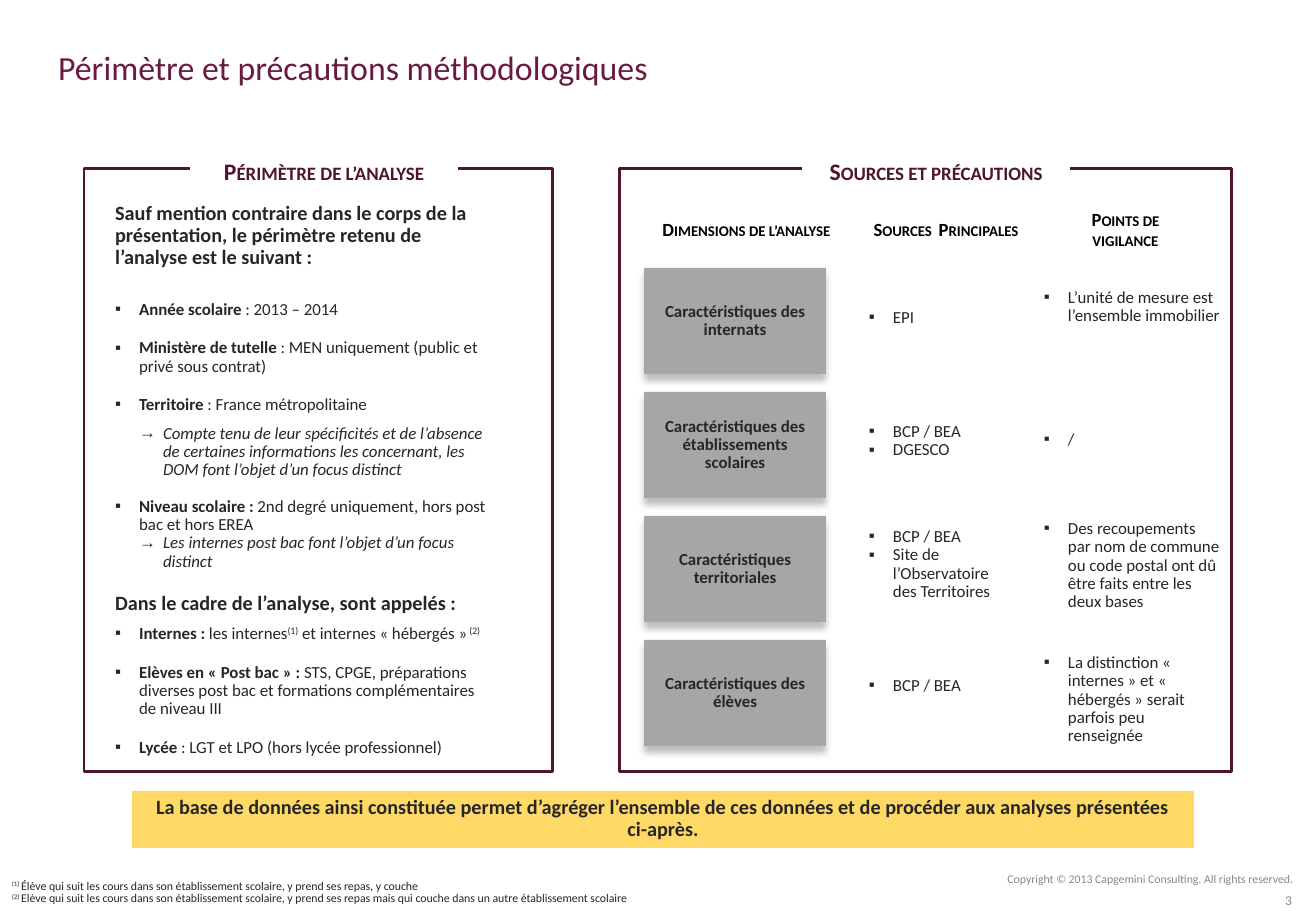
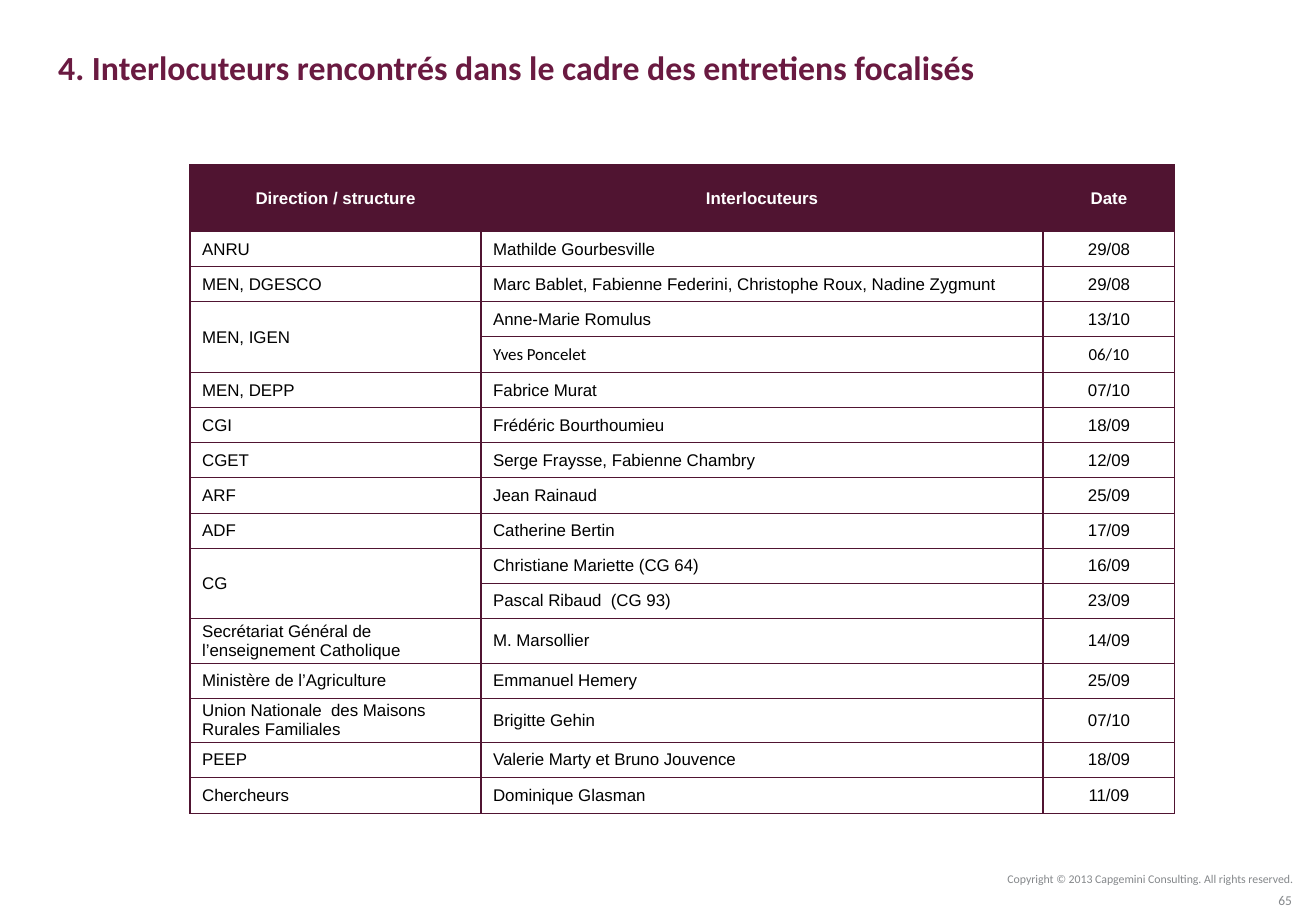
from lxml import etree
from pptx import Presentation
from pptx import util as u
from pptx.dml.color import RGBColor
from pptx.enum import shapes, text
from pptx.oxml import ns

PX = 914400 / 121.5
COLORS = {"title": "6A1A41", "plum": "501431", "ink": "262626", "black": "000000",
          "white": "FFFFFF", "footer": "85888B", "band": "FFD966", "card": "A6A6A6",
          "shadow": "BFBFBF"}
LEFT, CENTER, RIGHT = text.PP_ALIGN.LEFT, text.PP_ALIGN.CENTER, text.PP_ALIGN.RIGHT
TOP, MIDDLE = text.MSO_ANCHOR.TOP, text.MSO_ANCHOR.MIDDLE


def write(frame, content, size=10, color="ink", bold=False, italic=False, font="Calibri",
          align=LEFT, before=0, after=0, spacing=0.9, bullet=None, indent=0, caps=False):
    """Add one paragraph; *stars* mark bold text and ^carets^ mark superscript."""
    first = frame.paragraphs[0]
    p = frame.add_paragraph() if first.runs else first
    props = p._p.get_or_add_pPr()
    props.set("marL", str(round(indent * PX)))
    props.set("indent", str(round(-24 * PX) if bullet else 0))
    if bullet:
        etree.SubElement(props, ns.qn("a:buFont")).set("typeface", "Arial")
        etree.SubElement(props, ns.qn("a:buChar")).set("char", bullet)
    else:
        etree.SubElement(props, ns.qn("a:buNone"))
    p.alignment, p.line_spacing = align, spacing
    p.space_before, p.space_after = u.Pt(before), u.Pt(after)
    for b, chunk in enumerate(content.split("*")):
        for s, piece in enumerate(chunk.split("^")):
            if not piece:
                continue
            run = p.add_run()
            run.text = piece
            run.font.name, run.font.size = font, u.Pt(size)
            run.font.bold, run.font.italic = bold or b % 2 == 1, italic
            run.font.color.rgb = RGBColor.from_string(COLORS[color])
            if s % 2:
                run.font._element.set("baseline", "30000")
            if caps:
                run.font._element.set("cap", "small")


def box(slide, place, fill=None, line=None, anchor=MIDDLE):
    """Add a text box, or a rectangle when a fill is given."""
    place = [round(v * PX) for v in place]
    if fill:
        shape = slide.shapes.add_shape(shapes.MSO_SHAPE.RECTANGLE, *place)
        shape.shadow.inherit = False
        shape.fill.solid()
        shape.fill.fore_color.rgb = RGBColor.from_string(COLORS[fill])
        if line:
            shape.line.color.rgb = RGBColor.from_string(COLORS[line])
            shape.line.width = u.Pt(1.75)
        else:
            shape.line.fill.background()
    else:
        shape = slide.shapes.add_textbox(*place)
    shape.text_frame.word_wrap = True
    shape.text_frame.vertical_anchor = anchor
    return shape


deck = Presentation()
deck.slide_width, deck.slide_height = round(1316 * PX), round(911 * PX)
scope = deck.slides.add_slide(deck.slide_layouts[1])
contacts = deck.slides.add_slide(deck.slide_layouts[5])

# Titles and footers
for slide, heading, bold, number in (
        (scope, "Périmètre et précautions méthodologiques", False, "3"),
        (contacts, "4. Interlocuteurs rencontrés dans le cadre des entretiens focalisés",
         True, "65")):
    title = slide.shapes.title
    title.left, title.top, title.width, title.height = [
        round(v * PX) for v in (46, 16, 1270, 102)]
    title.text_frame.auto_size = text.MSO_AUTO_SIZE.NONE
    title.text_frame.vertical_anchor = MIDDLE
    write(title.text_frame, heading, size=20, color="title", bold=bold, spacing=1.0)
    write(box(slide, (920, 865, 385, 27)).text_frame,
          "Copyright © 2013 Capgemini Consulting. All rights reserved.",
          size=7, color="footer", align=RIGHT, spacing=1.0)
    write(box(slide, (997, 892, 307, 16)).text_frame, number,
          size=8, color="footer", align=RIGHT, spacing=1.0)

# Framed panels with their captions
for left, width, caption_left, caption in (
        (84, 469, 190, "Périmètre de l’analyse"),
        (620, 612, 802, "Sources et précautions")):
    box(scope, (left, 169, width, 603), fill="white", line="plum")
    write(box(scope, (caption_left, 149, 268, 47), fill="white").text_frame, caption,
          size=14, color="plum", bold=True, align=CENTER, caps=True)

# Scope of the analysis
perimeter = scope.placeholders[1]
perimeter.left, perimeter.top, perimeter.width, perimeter.height = [
    round(v * PX) for v in (103, 197, 401, 570)]
scope.shapes._spTree.append(perimeter._element)
perimeter.text_frame.auto_size = text.MSO_AUTO_SIZE.NONE
perimeter.text_frame.vertical_anchor = TOP
lead = dict(size=12, bold=True)
point = dict(bullet="▪", indent=24)
spaced = dict(point, before=6, after=6)
arrow = dict(bullet="→", indent=48, italic=True)
for content, style in (
        ("Sauf mention contraire dans le corps de la présentation, le périmètre retenu de "
         "l’analyse est le suivant :", lead),
        ("*Année scolaire *: 2013 – 2014", dict(spaced, before=19)),
        ("*Ministère de tutelle *: MEN uniquement (public et privé sous contrat)", spaced),
        ("*Territoire *: France métropolitaine", spaced),
        ("Compte tenu de leur spécificités et de l’absence de certaines informations les "
         "concernant, les DOM font l’objet d’un focus distinct", arrow),
        ("*Niveau scolaire : *2nd degré uniquement, hors post bac et hors EREA",
         dict(point, before=11)),
        ("Les internes post bac font l’objet d’un focus distinct", arrow),
        ("Dans le cadre de l’analyse, sont appelés :", dict(lead, before=13)),
        ("*Internes : *les internes^(1)^ et internes « hébergés »^ (2)^", spaced),
        ("*Elèves en « Post bac » : *STS, CPGE, préparations diverses post bac et "
         "formations complémentaires de niveau III", spaced),
        ("*Lycée *: LGT et LPO (hors lycée professionnel)", spaced)):
    write(perimeter.text_frame, content, **style)

# Column headings of the sources panel
for left, width, heading in ((612, 269, "Dimensions de l’analyse"),
                             (846, 200, "Sources  Principales"),
                             (1047, 157, "Points de vigilance")):
    write(box(scope, (left, 207, width, 47)).text_frame, heading,
          size=11, color="black", bold=True, align=CENTER, caps=True)

# One row per dimension: card, sources (top, height), caution (top, height)
dimensions = (
    ("Caractéristiques des internats", (303, 30), ["EPI"],
     (283, 68), "L’unité de mesure est l’ensemble immobilier"),
    ("Caractéristiques des établissements scolaires", (417, 49), ["BCP / BEA", "DGESCO"],
     (425, 30), "/"),
    ("Caractéristiques territoriales", (522, 86),
     ["BCP / BEA", "Site de l’Observatoire des Territoires"], (514, 104),
     "Des recoupements par nom de commune ou code postal ont dû être faits entre les "
     "deux bases"),
    ("Caractéristiques des élèves", (671, 30), ["BCP / BEA"], (648, 104),
     "La distinction « internes » et « hébergés » serait parfois peu renseignée"))
for row, (dimension, source_span, sources, caution_span, caution) in enumerate(dimensions):
    card = box(scope, (644, 268 + 124 * row, 182, 106), fill="card")
    shadow = etree.SubElement(card._element.spPr.find(ns.qn("a:effectLst")),
                              ns.qn("a:outerShdw"), blurRad="50800", dist="50800",
                              dir="5400000", algn="t", rotWithShape="0")
    etree.SubElement(shadow, ns.qn("a:srgbClr"), val=COLORS["shadow"])
    write(card.text_frame, dimension, bold=True, align=CENTER)
    source_list = box(scope, (857, source_span[0], 165, source_span[1]), anchor=TOP)
    for source in sources:
        write(source_list.text_frame, source, **point)
    write(box(scope, (1032, caution_span[0], 200, caution_span[1]), anchor=TOP).text_frame,
          caution, **point)

# Conclusion and footnotes
write(box(scope, (132, 791, 1062, 57), fill="band", anchor=TOP).text_frame,
      "La base de données ainsi constituée permet d’agréger l’ensemble de ces données et de "
      "procéder aux analyses présentées ci-après.", size=12, bold=True, align=CENTER)
footnotes = box(scope, (0, 874, 1233, 37), anchor=TOP).text_frame
for note in (
        "^(1) ^Élève qui suit les cours dans son établissement scolaire, y prend ses repas, "
        "y couche",
        "^(2) ^Elève qui suit les cours dans son établissement scolaire, y prend ses repas "
        "mais qui couche dans un autre établissement scolaire"):
    write(footnotes, note, size=7)

# Table of interviews; None continues the cell above
interviews = (
    ("Direction / structure", "Interlocuteurs", "Date"),
    ("ANRU", "Mathilde Gourbesville", "29/08"),
    ("MEN, DGESCO", "Marc Bablet, Fabienne Federini, Christophe Roux, Nadine Zygmunt",
     "29/08"),
    ("MEN, IGEN", "Anne-Marie Romulus", "13/10"),
    (None, "Yves Poncelet", "06/10"),
    ("MEN, DEPP", "Fabrice Murat", "07/10"),
    ("CGI", "Frédéric Bourthoumieu", "18/09"),
    ("CGET", "Serge Fraysse, Fabienne Chambry", "12/09"),
    ("ARF", "Jean Rainaud", "25/09"),
    ("ADF", "Catherine Bertin", "17/09"),
    ("CG", "Christiane Mariette (CG 64)", "16/09"),
    (None, "Pascal Ribaud  (CG 93)", "23/09"),
    ("Secrétariat Général de l’enseignement Catholique", "M. Marsollier", "14/09"),
    ("Ministère de l’Agriculture", "Emmanuel Hemery", "25/09"),
    ("Union Nationale  des Maisons Rurales Familiales", "Brigitte Gehin", "07/10"),
    ("PEEP", "Valerie Marty et Bruno Jouvence", "18/09"),
    ("Chercheurs", "Dominique Glasman", "11/09"))
widths = (291, 562, 132)
heights = [67] + [35 + (r % 4 == 0) for r in range(1, len(interviews))]
table = contacts.shapes.add_table(
    len(interviews), len(widths),
    *[round(v * PX) for v in (190, 165, sum(widths), sum(heights))]).table
table.first_row = table.horz_banding = False
for column, width in zip(table.columns, widths):
    column.width = round(width * PX)
for r, (entry, height) in enumerate(zip(interviews, heights)):
    table.rows[r].height = round(height * PX)
    for c, content in enumerate(entry):
        cell = table.cell(r, c)
        for side in ("lnL", "lnR", "lnT", "lnB"):
            border = etree.SubElement(cell._tc.get_or_add_tcPr(), ns.qn("a:" + side), w="9525")
            fill = etree.SubElement(border, ns.qn("a:solidFill"))
            etree.SubElement(fill, ns.qn("a:srgbClr"), val=COLORS["plum"])
        cell.fill.solid()
        cell.fill.fore_color.rgb = RGBColor.from_string(COLORS["white" if r else "plum"])
        cell.vertical_anchor = MIDDLE
        if r:
            cell.margin_top = cell.margin_bottom = round(2 * PX)
        if content is None:
            table.cell(r - 1, c).merge(cell)
            continue
        write(cell.text_frame, content, color="black" if r else "white", bold=r == 0,
              font="Calibri" if entry[1] == "Yves Poncelet" else "Arial",
              align=CENTER if r == 0 or c == 2 else LEFT, spacing=1.0)

deck.save("out.pptx")
